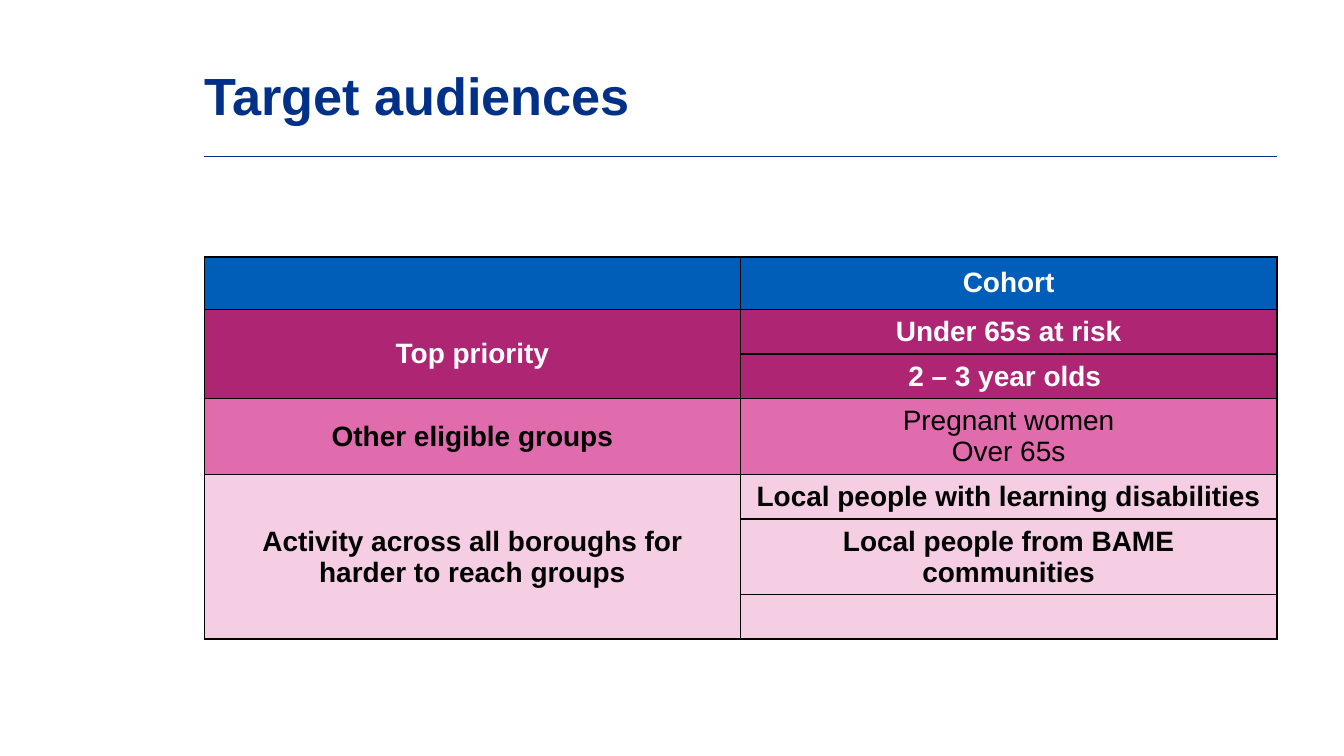
from dataclasses import dataclass

from lxml import etree
from pptx import Presentation
from pptx.dml.color import RGBColor
from pptx.enum.shapes import MSO_CONNECTOR
from pptx.enum.text import MSO_ANCHOR, MSO_AUTO_SIZE, PP_ALIGN
from pptx.oxml.ns import qn
from pptx.util import Inches, Pt

STRAIGHT = MSO_CONNECTOR.STRAIGHT
MIDDLE = MSO_ANCHOR.MIDDLE
NO_FIT = MSO_AUTO_SIZE.NONE
LEFT, CENTER = PP_ALIGN.LEFT, PP_ALIGN.CENTER

NAVY = RGBColor(0x00, 0x30, 0x87)
BLUE = RGBColor(0x00, 0x5E, 0xB8)
PLUM = RGBColor(0xAE, 0x25, 0x73)
PINK = RGBColor(0xE0, 0x6B, 0xAD)
PALE = RGBColor(0xF5, 0xCE, 0xE4)
WHITE = RGBColor(0xFF, 0xFF, 0xFF)
BLACK = RGBColor(0x00, 0x00, 0x00)

# Slide size (16:9) and shared column of content
WIDE = Inches(10)
HIGH = WIDE * 9 // 16
EDGE, SPAN = int(WIDE * 0.152), int(WIDE * 0.798)
RULE_Y, GRID_Y = int(HIGH * 0.207), int(HIGH * 0.34)

# Row heights: header, one line of text, two lines of text
HEAD, ONE, TWO = Inches(0.39), Inches(0.33), Inches(0.56)
FACE, TEXT_PT = "Arial", 15


@dataclass
class Item:
    text: str
    high: int = ONE
    bold: bool = True


@dataclass
class Band:
    label: str
    fill: RGBColor
    ink: RGBColor
    items: list[Item]


BANDS = [
    Band("", BLUE, WHITE, [Item("Cohort", HEAD)]),
    Band("Top priority", PLUM, WHITE,
         [Item("Under 65s at risk"), Item("2 – 3 year olds ")]),
    Band("Other eligible groups", PINK, BLACK,
         [Item("Pregnant women\nOver 65s", TWO, False)]),
    Band("Activity across all boroughs for harder to reach groups", PALE, BLACK,
         [Item("Local people with learning disabilities"),
          Item("Local people from BAME communities", TWO), Item("")]),
]


def style(font, ink: RGBColor, **form) -> None:
    for name, value in ({"name": FACE, "bold": True} | form).items():
        setattr(font, name, value)
    font.color.rgb = ink


def add_title(slide, text: str) -> None:
    title = slide.shapes.title
    box = {"left": EDGE, "top": int(HIGH * 0.041),
           "width": SPAN, "height": int(HIGH * 0.167)}
    for name, value in box.items():
        setattr(title, name, value)
    frame = title.text_frame
    form = {"margin_left": 0, "margin_right": 0, "margin_top": 0,
            "margin_bottom": 0, "vertical_anchor": MIDDLE,
            "word_wrap": True, "auto_size": NO_FIT}
    for name, value in form.items():
        setattr(frame, name, value)
    frame.text = text
    para = frame.paragraphs[0]
    para.alignment = LEFT
    style(para.runs[0].font, NAVY, size=Pt(28))


def add_rule(slide) -> None:
    rule = slide.shapes.add_connector(STRAIGHT, EDGE, RULE_Y, EDGE + SPAN, RULE_Y)
    rule.line.color.rgb = NAVY
    rule.line.width = Pt(0.5)
    etree.SubElement(rule._element.spPr, qn("a:effectLst"))


def add_edges(cell, ink: RGBColor) -> None:
    props = cell._tc.get_or_add_tcPr()
    for spot, side in enumerate(("lnL", "lnR", "lnT", "lnB")):
        line = etree.Element(qn(f"a:{side}"), w=str(Pt(1)))
        fill = etree.SubElement(line, qn("a:solidFill"))
        etree.SubElement(fill, qn("a:srgbClr"), val=str(ink))
        props.insert(spot, line)


def fill_cell(cell, text: str, band: Band, bold: bool = True) -> None:
    cell.fill.solid()
    cell.fill.fore_color.rgb = band.fill
    cell.vertical_anchor = MIDDLE
    add_edges(cell, BLACK)
    cell.text_frame.text = text
    for para in cell.text_frame.paragraphs:
        para.alignment = CENTER
        for run in para.runs:
            style(run.font, band.ink, size=Pt(TEXT_PT), bold=bold)
        if not para.runs:  # keeps an empty row as low as a line of text
            end = etree.SubElement(
                para._p, qn("a:endParaRPr"), sz=str(TEXT_PT * 100))
            etree.SubElement(end, qn("a:latin"), typeface=FACE)


def add_grid(slide, bands: list[Band]) -> None:
    highs = [item.high for band in bands for item in band.items]
    table = slide.shapes.add_table(
        len(highs), 2, EDGE, GRID_Y, SPAN, sum(highs)).table
    for row, high in zip(table.rows, highs):
        row.height = high
    top = 0
    for band in bands:
        last = top + len(band.items) - 1
        for row, item in enumerate(band.items, top):
            fill_cell(table.cell(row, 0), band.label if row == top else "", band)
            fill_cell(table.cell(row, 1), item.text, band, item.bold)
        if last > top:
            table.cell(top, 0).merge(table.cell(last, 0))
        top = last + 1


def main() -> None:
    deck = Presentation()
    deck.slide_width, deck.slide_height = WIDE, HIGH
    slide = deck.slides.add_slide(deck.slide_layouts.get_by_name("Title Only"))
    add_title(slide, "Target audiences")
    add_rule(slide)
    add_grid(slide, BANDS)
    deck.save("out.pptx")


if __name__ == "__main__":
    main()
